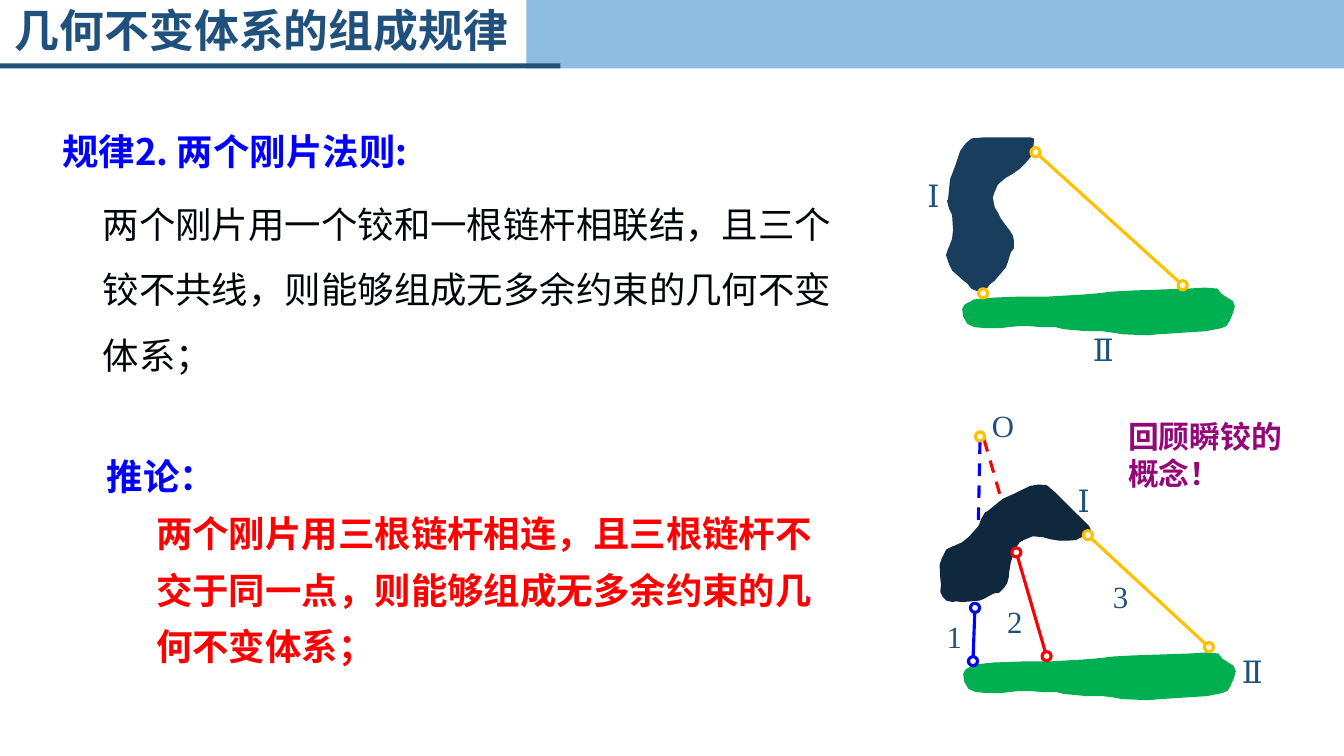
import pptx
import pptx.util
import pptx.dml.color
import pptx.enum.dml
import pptx.enum.shapes
import pptx.enum.text
import pptx.oxml.ns
import lxml.etree
from dataclasses import dataclass

# Grid of 1333 columns by 750 rows; a cell is a hundredth of an inch
CELL = 9144
COLS, ROWS = 1333, 750


@dataclass(frozen=True)
class Theme:
    navy: str = "20517C"
    sky: str = "8EBBE2"
    steel: str = "183D5D"
    night: str = "10283E"
    green: str = "00B050"
    gold: str = "FFC000"
    blue: str = "0000FF"
    red: str = "FF0000"
    plum: str = "950777"
    ink: str = "02060A"
    white: str = "FFFFFF"
    sans: str = "Noto Sans CJK SC"
    serif: str = "Times New Roman"
    title: int = 32
    body: int = 26
    label: int = 22
    rod: float = 2.25


T = Theme()

# Outlines of the two rigid bodies, in grid cells
BODY = [
    (941, 198), (943, 178), (948, 165), (950, 159), (953, 150), (958, 143),
    (964, 138), (975, 137), (999, 137), (1022, 137), (1025, 138), (1024, 149),
    (1023, 152), (1022, 155), (1017, 161), (1011, 167), (1004, 172),
    (997, 176), (991, 181), (989, 183), (986, 190), (984, 196), (986, 206),
    (989, 211), (992, 217), (997, 224), (1001, 229), (1004, 234), (1005, 239),
    (1005, 246), (1002, 250), (1001, 253), (999, 260), (997, 265), (992, 271),
    (986, 278), (981, 282), (979, 285), (974, 288), (969, 288), (964, 286),
    (960, 281), (955, 277), (945, 268), (942, 262), (940, 256), (939, 253),
    (941, 247), (942, 245), (945, 237), (946, 228), (945, 213), (942, 207),
    (940, 199)]
BAR = [
    (965, 298), (985, 296), (1012, 295), (1039, 295), (1074, 293), (1086, 292),
    (1104, 290), (1122, 289), (1180, 287), (1195, 286), (1207, 287),
    (1211, 292), (1217, 296), (1222, 299), (1224, 304), (1222, 311),
    (1219, 318), (1216, 323), (1211, 325), (1196, 328), (1180, 329),
    (1165, 330), (1149, 331), (1138, 332), (1113, 331), (1101, 329),
    (1093, 328), (1077, 328), (1067, 327), (1055, 326), (1047, 324),
    (1033, 324), (1022, 323), (1009, 323), (1000, 324), (991, 325),
    (979, 325), (967, 324), (960, 321), (956, 314), (955, 307), (957, 303),
    (960, 301), (963, 300)]


def color(name):
    return pptx.dml.color.RGBColor.from_string(name)


def paint(shape, fill, edge=None, width=1):
    shape.shadow.inherit = False
    shape.fill.solid()
    shape.fill.fore_color.rgb = color(fill)
    if edge:
        shape.line.color.rgb = color(edge)
        shape.line.width = pptx.util.Pt(width)
    else:
        shape.line.fill.background()


def block(slide, left, top, wide, high, fill):
    kind = pptx.enum.shapes.MSO_SHAPE.RECTANGLE
    area = [v * CELL for v in (left, top, wide, high)]
    paint(slide.shapes.add_shape(kind, *area), fill)


def blob(slide, dots, fill, shift=(0, 0), turn=0):
    dots = [(x + shift[0], y + shift[1]) for x, y in dots]
    pen = slide.shapes.build_freeform(*dots[0], scale=CELL)
    pen.add_line_segments(dots[1:], close=True)
    shape = pen.convert_to_shape()
    shape.rotation = turn
    paint(shape, fill, fill)


def rod(slide, start, end, ink, dash=False):
    ends = [v * CELL for v in (*start, *end)]
    kind = pptx.enum.shapes.MSO_CONNECTOR.STRAIGHT
    line = slide.shapes.add_connector(kind, *ends)
    line.line.color.rgb = color(ink)
    line.line.width = pptx.util.Pt(T.rod)
    if dash:
        line.line.dash_style = pptx.enum.dml.MSO_LINE.DASH
    props = line._element.spPr
    lxml.etree.SubElement(props, pptx.oxml.ns.qn("a:effectLst"))


def hinge(slide, x, y, ink):
    size = 9
    area = [v * CELL for v in (x - size / 2, y - size / 2, size, size)]
    area = [int(v) for v in area]
    kind = pptx.enum.shapes.MSO_SHAPE.OVAL
    paint(slide.shapes.add_shape(kind, *area), T.white, ink, T.rod)


def style(para, size, ink, face, bold=False):
    for run in para.runs:
        font = run.font
        font.size = pptx.util.Pt(size)
        font.bold = bold
        font.color.rgb = color(ink)
        font.name = face
        east = lxml.etree.SubElement(run._r.rPr, pptx.oxml.ns.qn("a:ea"))
        east.set("typeface", face)


def write(slide, area, rows, size, face=T.sans, wrap=True, middle=False):
    """Each row holds text, colour, bold, line spacing, space before, indent."""
    box = slide.shapes.add_textbox(*[v * CELL for v in area])
    frame = box.text_frame
    frame.word_wrap = wrap
    if middle:
        frame.vertical_anchor = pptx.enum.text.MSO_ANCHOR.MIDDLE
    for i, (text, ink, bold, lead, gap, inset) in enumerate(rows):
        para = frame.add_paragraph() if i else frame.paragraphs[0]
        para.text = text
        para.line_spacing = lead
        para.space_before = pptx.util.Pt(gap)
        para._p.get_or_add_pPr().set("marL", str(inset * CELL))
        style(para, size, ink, face, bold)


def label(slide, x, y, text, wide=36):
    rows = [(text, T.navy, False, 1.0, 0, 0)]
    write(slide, (x, y, wide, 47), rows, T.label, T.serif, wrap=False)


def header(slide):
    block(slide, 522, 0, COLS - 522, 68, T.sky)
    block(slide, 0, 63, 556, 5, T.navy)
    write(slide, (5, 1, 674, 63),
          [("几何不变体系的组成规律", T.navy, True, 0.9, 0, 0)],
          T.title, middle=True)


def rules(slide):
    write(slide, (52, 102, 795, 276), [
        ("规律2. 两个刚片法则:", T.blue, True, 1.5, 0, 0),
        ("两个刚片用一个铰和一根链杆相联结，且三个铰不共线，"
         "则能够组成无多余约束的几何不变体系；", T.ink, False, 1.5, 5, 40),
    ], T.body)
    write(slide, (96, 424, 745, 246), [
        ("推论：", T.blue, True, 1.5, 0, 0),
        ("两个刚片用三根链杆相连，且三根链杆不交于同一点，"
         "则能够组成无多余约束的几何不变体系；", T.red, True, 1.3, 0, 49),
    ], T.body)
    write(slide, (1109, 410, 199, 84),
          [("回顾瞬铰的概念！", T.plum, True, 1.0, 0, 0)], T.label)


def links(slide, rods):
    for start, end, ink in rods:
        rod(slide, start, end, ink)
        hinge(slide, *start, ink)
        hinge(slide, *end, ink)


def upper(slide):
    blob(slide, BODY, T.steel)
    blob(slide, BAR, T.green)
    links(slide, [((1027, 151), (1173, 283), T.gold)])
    hinge(slide, 975, 291, T.gold)
    label(slide, 910, 170, "Ⅰ", 31)
    label(slide, 1074, 323, "Ⅱ", 40)


def lower(slide):
    rod(slide, (972, 438), (970, 536), T.blue, dash=True)
    rod(slide, (976, 436), (993, 495), T.red, dash=True)
    hinge(slide, 972, 433, T.gold)
    blob(slide, BAR, T.green, shift=(1, 362))
    blob(slide, BODY, T.night, shift=(16, 335), turn=45)
    links(slide, [((967, 603), (965, 656), T.blue),
                  ((1008, 548), (1038, 651), T.red),
                  ((1079, 531), (1199, 642), T.gold)])
    for x, y, text in [(974, 399, "O"), (1059, 473, "Ⅰ"), (1222, 643, "Ⅱ"),
                       (929, 608, "1"), (989, 593, "2"), (1094, 568, "3")]:
        label(slide, x, y, text)


def main():
    deck = pptx.Presentation()
    deck.slide_width, deck.slide_height = COLS * CELL, ROWS * CELL
    slide = deck.slides.add_slide(deck.slide_layouts[6])
    header(slide)
    rules(slide)
    upper(slide)
    lower(slide)
    deck.save("out.pptx")


if __name__ == "__main__":
    main()
